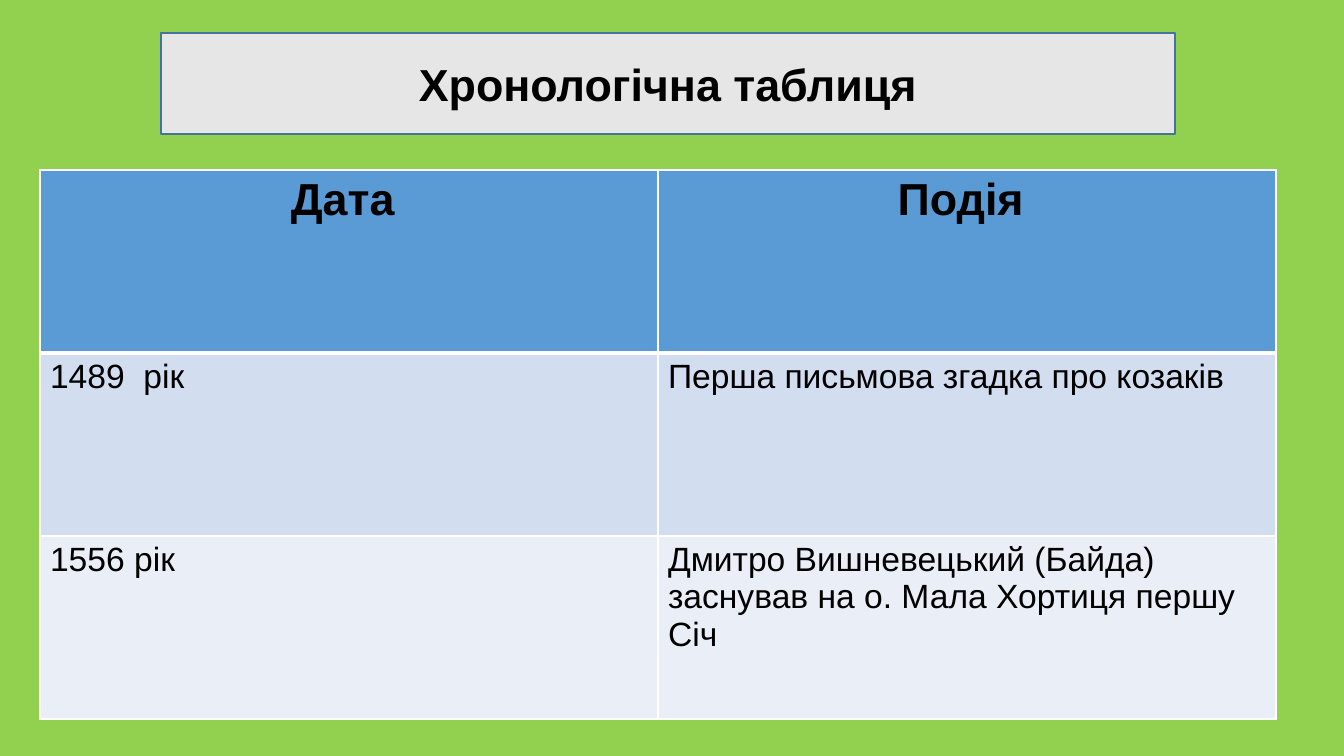
"""Builds the chronological table slide about the Cossacks."""
import pptx
import pptx.dml.color
import pptx.enum.text
import pptx.oxml
import pptx.oxml.ns
import pptx.util

SCALE = 12192000 / 1344
COLORS = {
    "background": "92D050",
    "banner": "E7E6E6",
    "banner_line": "43739E",
    "header": "5B9BD5",
    "odd_row": "D2DEEF",
    "even_row": "EAEFF7",
    "border": "FFFFFF",
    "text": "000000",
}
HEADING_FONT = {"name": "Arial", "size": pptx.util.Pt(32), "bold": True}
BODY_FONT = {"name": "Arial", "size": pptx.util.Pt(24), "bold": False}
EVENTS = [
    ("Дата ", "Подія "),
    ("1489  рік", "Перша письмова згадка про козаків"),
    ("1556 рік", "Дмитро Вишневецький (Байда) заснував на о. Мала Хортиця першу Січ"),
]
ROW_FILLS = ["header", "odd_row", "even_row"]


def px(length):
    """Turn px into EMU."""
    return pptx.util.Emu(round(length * SCALE))


def rgb(name):
    """Look up a named colour."""
    return pptx.dml.color.RGBColor.from_string(COLORS[name])


def paint(fill, name):
    """Apply a solid named colour to a fill."""
    fill.solid()
    fill.fore_color.rgb = rgb(name)


def write(frame, words, font_values, align):
    """Write one formatted paragraph into a text frame."""
    paragraph = frame.paragraphs[0]
    paragraph.alignment = align
    run = paragraph.add_run()
    run.text = words
    for key, value in font_values.items():
        setattr(run.font, key, value)
    run.font.color.rgb = rgb("text")


def add_banner(slide, words, left, top, width, height):
    """Place the slide title as a framed banner."""
    banner = slide.shapes.title
    bounds = {"left": left, "top": top, "width": width, "height": height}
    for key, value in bounds.items():
        setattr(banner, key, px(value))
    paint(banner.fill, "banner")
    paint(banner.line.fill, "banner_line")
    banner.line.width = pptx.util.Pt(2)
    frame_format = {
        "word_wrap": True,
        "auto_size": pptx.enum.text.MSO_AUTO_SIZE.NONE,
        "vertical_anchor": pptx.enum.text.MSO_ANCHOR.MIDDLE,
    }
    for key, value in frame_format.items():
        setattr(banner.text_frame, key, value)
    write(banner.text_frame, words, HEADING_FONT, pptx.enum.text.PP_ALIGN.CENTER)


def add_borders(cell, widths):
    """Draw the cell borders, widths given in points by side."""
    properties = cell._tc.get_or_add_tcPr()
    for side, width in widths.items():
        properties.append(pptx.oxml.parse_xml(
            f'<a:ln{side} {pptx.oxml.ns.nsdecls("a")} w="{pptx.util.Pt(width)}">'
            f'<a:solidFill><a:srgbClr val="{COLORS["border"]}"/></a:solidFill>'
            f'</a:ln{side}>'
        ))


def add_chronology(slide, left, top, column_width, row_height):
    """Add the table of dates and events."""
    row_count, column_count = len(EVENTS), len(EVENTS[0])
    chronology = slide.shapes.add_table(
        row_count, column_count, px(left), px(top),
        px(column_width * column_count), px(row_height * row_count),
    ).table
    for column in chronology.columns:
        column.width = px(column_width)
    for row_index, event in enumerate(EVENTS):
        chronology.rows[row_index].height = px(row_height)
        is_header = row_index == 0
        font_values = HEADING_FONT if is_header else BODY_FONT
        align = pptx.enum.text.PP_ALIGN.CENTER if is_header else pptx.enum.text.PP_ALIGN.LEFT
        widths = {"L": 1, "R": 1, "T": 3 if row_index == 1 else 1, "B": 3 if is_header else 1}
        for column_index, words in enumerate(event):
            cell = chronology.cell(row_index, column_index)
            add_borders(cell, widths)
            paint(cell.fill, ROW_FILLS[row_index])
            write(cell.text_frame, words, font_values, align)


def main():
    """Build and save the slide."""
    deck = pptx.Presentation()
    deck.slide_width, deck.slide_height = px(1344), px(756)
    slide = deck.slides.add_slide(deck.slide_layouts[5])
    paint(slide.background.fill, "background")
    add_chronology(slide, 40, 170, 618, 183)
    add_banner(slide, "Хронологічна таблиця", 161, 33, 1014, 101)
    deck.save("out.pptx")


if __name__ == "__main__":
    main()
